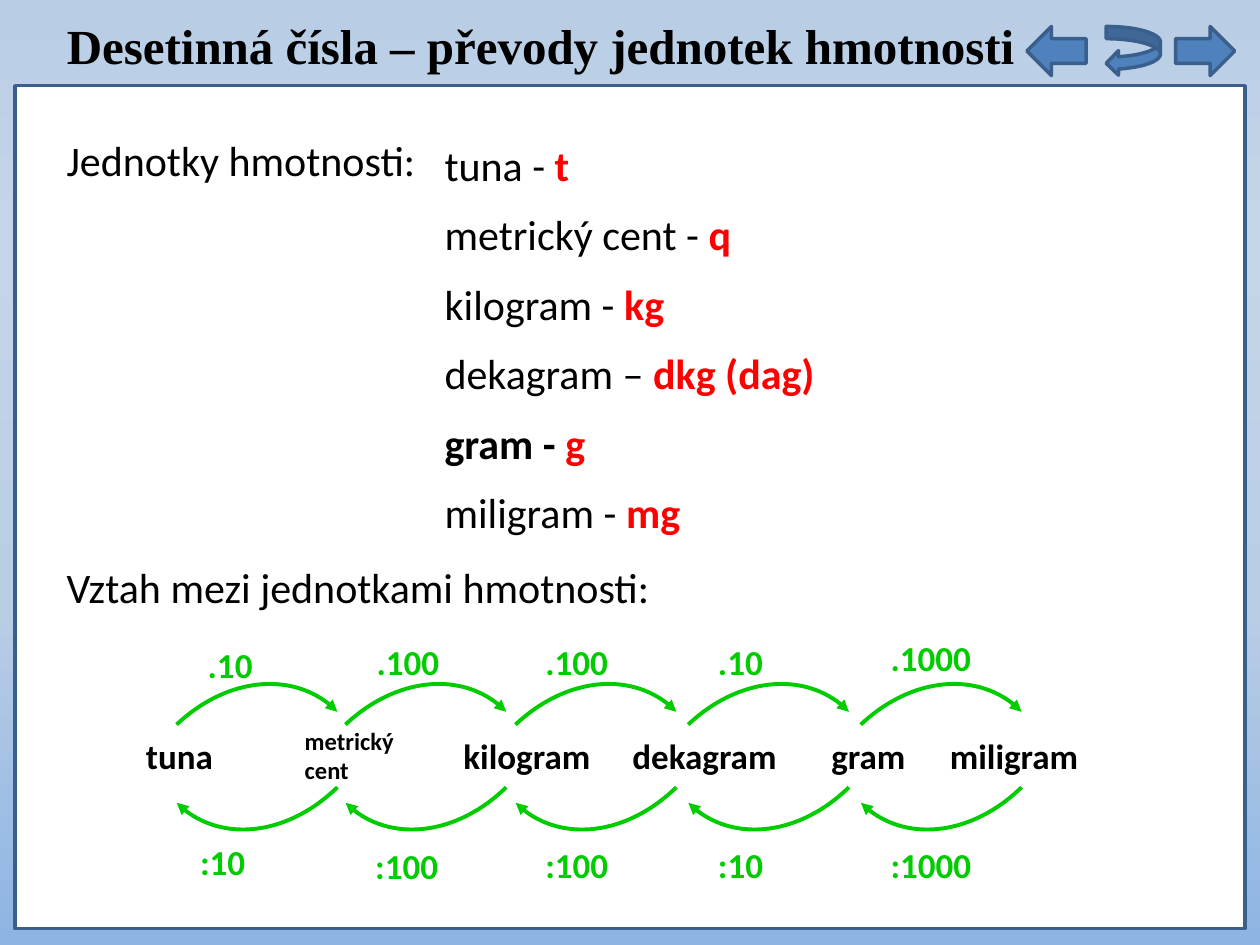
"""Build the slide on decimal numbers and conversions between units of mass."""
from dataclasses import dataclass

import pptx
import pptx.dml.color
import pptx.enum.shapes
import pptx.enum.text
import pptx.oxml
import pptx.oxml.ns
import pptx.util

Inches = pptx.util.Inches
Pt = pptx.util.Pt
PRESET = pptx.enum.shapes.MSO_SHAPE
ALIGN = pptx.enum.text.PP_ALIGN

COLORS = {
    "text": "000000",
    "symbol": "FF0000",
    "factor": "00CC00",
    "panel": "FFFFFF",
    "button": "4F81BD",
    "border": "3A5F8C",
}
BACKDROP = [(0, "B9CDE5"), (25, "C5D5E9"), (64, "B9CDE5"), (100, "8EB4E3")]
FORMATS = {
    "title": {"name": "Times New Roman", "size": Pt(28), "bold": True},
    "body": {"name": "Calibri", "size": Pt(24), "bold": False},
    "strong": {"name": "Calibri", "size": Pt(24), "bold": True},
    "scale": {"name": "Calibri", "size": Pt(20), "bold": True},
    "small": {"name": "Calibri", "size": Pt(14), "bold": True},
}
FRAME = {
    "word_wrap": True,
    "vertical_anchor": pptx.enum.text.MSO_ANCHOR.MIDDLE,
}


@dataclass(frozen=True)
class Run:
    text: str
    style: str = "body"
    color: str = "text"


@dataclass(frozen=True)
class Box:
    left: float
    top: float
    width: float
    height: float

    def emu(self) -> list[int]:
        return [Inches(v) for v in (self.left, self.top, self.width, self.height)]


@dataclass(frozen=True)
class Unit:
    label: Run
    symbol: str
    width: float


@dataclass(frozen=True)
class Step:
    left: float
    factor: str
    multiply_left: float
    multiply_top: float
    divide_left: float
    divide_top: float


@dataclass(frozen=True)
class ScaleUnit:
    name: str
    left: float
    width: float
    style: str = "scale"


UNITS = [
    Unit(Run("tuna - "), "t", 3.78),
    Unit(Run("metrický cent - "), "q", 4.8),
    Unit(Run("kilogram - "), "kg", 4.41),
    Unit(Run("dekagram – "), "dkg (dag)", 5.59),
    Unit(Run("gram - ", "strong"), "g", 3.78),
    Unit(Run("miligram - "), "mg", 5.28),
]
UNITS_TOP, UNITS_SPAN = 1.07, 2.76
SCALE = [
    ScaleUnit("tuna", 1.06, 0.86),
    ScaleUnit("metrický cent", 2.32, 1.1, "small"),
    ScaleUnit("kilogram", 3.58, 1.34),
    ScaleUnit("dekagram", 4.92, 1.61),
    ScaleUnit("gram", 6.5, 0.94),
    ScaleUnit("miligram", 7.44, 1.34),
]
STEPS = [
    Step(1.54, "10", 1.55, 5.08, 1.49, 6.65),
    Step(2.88, "100", 2.89, 5.06, 2.88, 6.68),
    Step(4.23, "100", 4.23, 5.06, 4.23, 6.67),
    Step(5.6, "10", 5.6, 5.06, 5.6, 6.67),
    Step(6.97, "1000", 6.97, 5.03, 6.97, 6.67),
]
BUTTONS = [
    (PRESET.LEFT_ARROW, Box(8.15, 0.21, 0.47, 0.39)),
    (PRESET.CURVED_LEFT_ARROW, Box(8.78, 0.21, 0.43, 0.39)),
    (PRESET.RIGHT_ARROW, Box(9.33, 0.21, 0.47, 0.39)),
]
QUARTER_ARC = [(0, 0), (0.55, 0), (1, 0.36), (1, 0.8)]


def rgb(color: str) -> pptx.dml.color.RGBColor:
    return pptx.dml.color.RGBColor.from_string(COLORS[color])


def paint_background(slide) -> None:
    fill = slide.background.fill
    fill.gradient()
    fill.gradient_angle = 270
    stops = next(slide.element.iter(pptx.oxml.ns.qn("a:gsLst")))
    for stop in list(stops):
        stops.remove(stop)
    for percent, color in BACKDROP:
        stops.append(pptx.oxml.parse_xml(
            f'<a:gs {pptx.oxml.ns.nsdecls("a")} pos="{percent * 1000}">'
            f'<a:srgbClr val="{color}"/></a:gs>'))


def add_preset(shapes, preset, box: Box, color: str) -> None:
    shape = shapes.add_shape(preset, *box.emu())
    shape.shadow.inherit = False
    shape.fill.solid()
    shape.fill.fore_color.rgb = rgb(color)
    shape.line.color.rgb = rgb("border")
    shape.line.width = Pt(2)


def add_text(shapes, box: Box, *runs: Run, align=ALIGN.LEFT) -> None:
    frame = shapes.add_textbox(*box.emu()).text_frame
    for attribute, value in FRAME.items():
        setattr(frame, attribute, value)
    paragraph = frame.paragraphs[0]
    paragraph.alignment = align
    for item in runs:
        run = paragraph.add_run()
        run.text = item.text
        run.font.color.rgb = rgb(item.color)
        for attribute, value in FORMATS[item.style].items():
            setattr(run.font, attribute, value)


def add_arc(shapes, left: float, top: float, rotation: float) -> None:
    start, *rest = [(Inches(left + x), Inches(top + y)) for x, y in QUARTER_ARC]
    builder = shapes.build_freeform(*start)
    builder.add_line_segments(rest, close=False)
    arc = builder.convert_to_shape()
    arc.rotation = rotation
    arc.shadow.inherit = False
    arc.fill.background()
    arc.line.color.rgb = rgb("factor")
    arc.line.width = Pt(2.25)
    qn, nsdecls = pptx.oxml.ns.qn, pptx.oxml.ns.nsdecls("a")
    outline = next(arc.element.iter(qn("a:path")))
    bezier = pptx.oxml.parse_xml(f"<a:cubicBezTo {nsdecls}/>")
    for segment in outline.findall(qn("a:lnTo")):
        bezier.append(segment[0])
        outline.remove(segment)
    outline.append(bezier)
    next(arc.element.iter(qn("a:ln"))).append(
        pptx.oxml.parse_xml(f'<a:tailEnd {nsdecls} type="triangle"/>'))


def add_step(slide, step: Step) -> None:
    for sign, arc_top, rotation, left, top in (
            (".", 5.3, 316.8, step.multiply_left, step.multiply_top),
            (":", 5.91, 135.8, step.divide_left, step.divide_top)):
        shapes = slide.shapes.add_group_shape().shapes
        add_arc(shapes, step.left, arc_top, rotation)
        add_text(shapes, Box(left, top, 1.1, 0.38),
                 Run(sign + step.factor, "scale", "factor"))


def main() -> None:
    deck = pptx.Presentation()
    deck.slide_width, deck.slide_height = Inches(10), Inches(7.5)
    slide = deck.slides.add_slide(deck.slide_layouts[6])
    shapes = slide.shapes
    paint_background(slide)
    add_preset(shapes, PRESET.RECTANGLE, Box(0.12, 0.68, 9.76, 6.69), "panel")
    for preset, box in BUTTONS:
        add_preset(shapes, preset, box, "button")
    add_text(shapes, Box(0.03, -0.03, 8.52, 0.77),
             Run("Desetinná čísla – převody jednotek hmotnosti", "title"),
             align=ALIGN.CENTER)
    add_text(shapes, Box(0.43, 0.99, 3.54, 0.55), Run("Jednotky hmotnosti:"))
    for row, unit in enumerate(UNITS):
        top = UNITS_TOP + UNITS_SPAN * row / (len(UNITS) - 1)
        add_text(shapes, Box(3.43, top, unit.width, 0.47),
                 unit.label, Run(unit.symbol, "strong", "symbol"))
    for unit in SCALE:
        add_text(shapes, Box(unit.left, 5.76, unit.width, 0.47),
                 Run(unit.name, unit.style))
    for step in STEPS:
        add_step(slide, step)
    add_text(shapes, Box(0.43, 4.38, 5.51, 0.55),
             Run("Vztah mezi jednotkami hmotnosti:"))
    deck.save("out.pptx")


if __name__ == "__main__":
    main()
